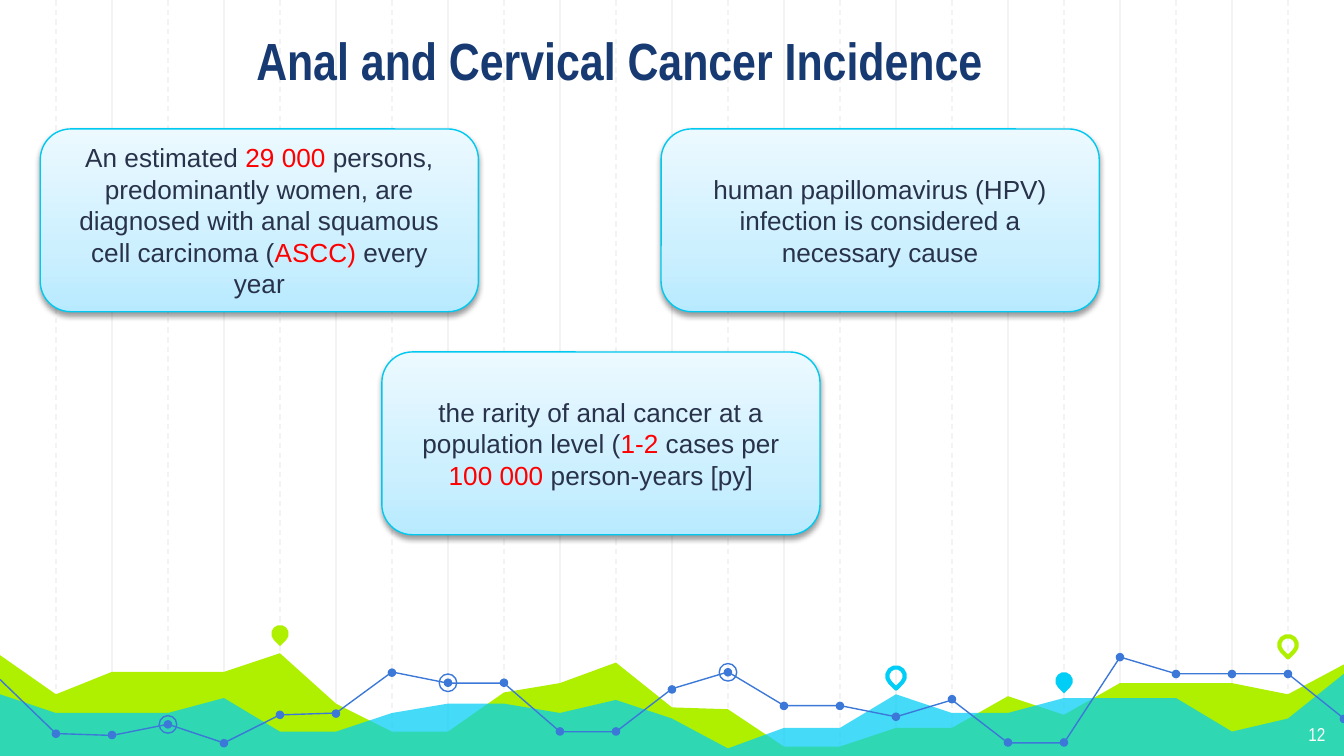
from lxml import etree
from pptx import Presentation
from pptx import util as u
from pptx.dml.color import RGBColor
from pptx.enum import dml, shapes, text
from pptx.oxml import parse_xml
from pptx.oxml.ns import nsdecls, qn

WIDTH, HEIGHT = 720, 405
STEP = 30  # horizontal distance between grid lines
BASE = 406.5  # foot of the waves and of the grid lines

NAVY, INK, RED, WHITE = "173A73", "28324A", "FF0000", "FFFFFF"
GRID, GREEN, CYAN, BLUE = "F3F3F3", "AFF000", "00CEF6", "3C78D8"
CARD_LINE = "00C9F1"
CARD_STOPS = [(0, "B8EAFF"), (35, "CDF0FF"), (100, "ECF9FF")]

TITLE = "Anal and Cervical Cancer Incidence"
PAGE_NUMBER = "12"

CARD_SIZE = (234.7, 97.9)
CARDS = [  # left, top, runs
    (21.6, 69.1, [
        ("An estimated ", INK), ("29 000", RED),
        (" persons, predominantly women, are diagnosed with anal squamous cell carcinoma (", INK),
        ("ASCC)", RED), (" every year", INK)]),
    (354.2, 69.1, [
        ("human papillomavirus (HPV) infection is considered a necessary cause", INK)]),
    (204.6, 188.6, [
        ("the rarity of anal cancer at a population level (", INK), ("1‐2", RED),
        (" cases per ", INK), ("100 000 ", RED), ("person‐years [py]", INK)]),
]

# One height for each grid line, from the left edge to the right edge
GREEN_WAVE = [350.6, 372.2, 360, 360, 360, 349.9, 376.6, 391.7, 391.7, 370.8, 365.8, 355, 379.4,
              380.2, 399.6, 399.6, 389.5, 389.5, 373, 383, 366.5, 366.1, 365.8, 372.2, 355.7]
CYAN_WAVE = [371.5, 382.3, 382.3, 382.3, 373.7, 392.4, 392.4, 382.3, 376.6, 376.6, 381.6, 375.1,
             385.2, 401, 390.2, 390.2, 372.2, 382.3, 382.3, 373.7, 373.7, 373.7, 391.7, 385.2, 360.7]
TREND = [364.3, 393.1, 393.8, 388.1, 398.2, 383, 382.3, 360.4, 365.8, 365.8, 391.9, 391.9, 369.4,
         360.2, 378.2, 378.2, 384, 374.6, 397.8, 397.8, 352.1, 361.1, 361.1, 361.1, 385.2]
TREND_PIECES = [(0, 11), (11, 20), (20, 24)]
RINGED = [8, 3, 13]
PINS = [  # grid line, middle height, colour, filled
    (5, 339.5, GREEN, True), (16, 362.2, CYAN, False),
    (19, 364.8, CYAN, True), (23, 345.5, GREEN, False),
]


def color(value):
    return RGBColor.from_string(value)


def paint(shape, fill=None, line=None, weight=0.75):
    shape.shadow.inherit = False
    if fill:
        shape.fill.solid()
        shape.fill.fore_color.rgb = color(fill)
    else:
        shape.fill.background()
    if line:
        shape.line.color.rgb = color(line)
        shape.line.width = u.Pt(weight)
    else:
        shape.line.fill.background()


def write(shape, runs, size, font, align, anchor, bold=False, inset=None):
    """Fill the shape with one paragraph of (text, colour) runs."""
    frame = shape.text_frame
    frame.word_wrap = True
    frame.auto_size = text.MSO_AUTO_SIZE.NONE
    frame.vertical_anchor = anchor
    if inset is not None:
        frame.margin_left = frame.margin_right = u.Pt(inset)
        frame.margin_top = frame.margin_bottom = u.Pt(inset)
    paragraph = frame.paragraphs[0]
    paragraph.alignment = align
    for words, shade in runs:
        run = paragraph.add_run()
        run.text = words
        run.font.size, run.font.name, run.font.bold = u.Pt(size), font, bold
        run.font.color.rgb = color(shade)


def place(shape, left, top, width, height):
    shape.left, shape.top = u.Pt(left), u.Pt(top)
    shape.width, shape.height = u.Pt(width), u.Pt(height)


def add_centred(kind, x, y, size):
    half = size / 2
    return slide.shapes.add_shape(kind, u.Pt(x - half), u.Pt(y - half), u.Pt(size), u.Pt(size))


def add_outline(points, close):
    builder = slide.shapes.build_freeform(*points[0], scale=u.Pt(1))
    builder.add_line_segments(points[1:], close=close)
    return builder.convert_to_shape()


def on_grid(heights, first=0):
    return [(STEP * i, y) for i, y in enumerate(heights, first)]


def add_wave(heights, fill):
    wave = add_outline(on_grid(heights) + [(WIDTH, BASE), (0, BASE)], True)
    paint(wave, fill)
    return wave


def add_grid_line(x, dashed):
    line = slide.shapes.add_connector(
        shapes.MSO_CONNECTOR.STRAIGHT, u.Pt(x), u.Pt(0), u.Pt(x), u.Pt(BASE))
    line.line.color.rgb = color(GRID)
    line.line.width = u.Pt(0.75)
    if dashed:
        line.line.dash_style = dml.MSO_LINE.DASH
    etree.SubElement(line._element.spPr, qn("a:effectLst"))


def add_card(left, top, runs):
    card = slide.shapes.add_shape(
        shapes.MSO_SHAPE.ROUNDED_RECTANGLE, u.Pt(left), u.Pt(top), *map(u.Pt, CARD_SIZE))
    paint(card, WHITE, CARD_LINE)
    properties = card._element.spPr
    stops = "".join(f'<a:gs pos="{at * 1000}"><a:srgbClr val="{shade}"/></a:gs>'
                    for at, shade in CARD_STOPS)
    properties.replace(properties.find(qn("a:solidFill")), parse_xml(
        f'<a:gradFill {nsdecls("a")}><a:gsLst>{stops}</a:gsLst>'
        '<a:lin ang="16200000" scaled="0"/></a:gradFill>'))
    properties.find(qn("a:effectLst")).append(parse_xml(
        f'<a:outerShdw {nsdecls("a")} blurRad="{u.Pt(3.1)}" dist="{u.Pt(1.6)}" dir="5400000" '
        'rotWithShape="0"><a:srgbClr val="000000"><a:alpha val="38000"/></a:srgbClr></a:outerShdw>'))
    write(card, runs, 14, "Arial", text.PP_ALIGN.CENTER, text.MSO_ANCHOR.MIDDLE)


presentation = Presentation()
presentation.slide_width, presentation.slide_height = u.Pt(WIDTH), u.Pt(HEIGHT)
slide = presentation.slides.add_slide(presentation.slide_layouts[5])

for first in (2, 1):  # solid lines on even steps, dashed on odd ones
    for i in range(first, WIDTH // STEP, 2):
        add_grid_line(STEP * i, dashed=first == 1)

add_wave(GREEN_WAVE, GREEN)
cyan_wave = add_wave(CYAN_WAVE, CYAN)
cyan_fill = cyan_wave._element.spPr.find(qn("a:solidFill"))
etree.SubElement(cyan_fill[0], qn("a:alpha"), val="73000")

for start, end in TREND_PIECES:
    paint(add_outline(on_grid(TREND[start:end + 1], start), False), line=BLUE)
for x, y in on_grid(TREND)[1:]:
    paint(add_centred(shapes.MSO_SHAPE.OVAL, x, y, 4.6), BLUE)
for i in RINGED:
    paint(add_centred(shapes.MSO_SHAPE.OVAL, STEP * i, TREND[i], 9.4), line=BLUE)

for i, y, shade, filled in PINS:
    pin = add_centred(shapes.MSO_SHAPE.TEAR, STEP * i, y, 9.4)
    pin.rotation = 135
    paint(pin, shade if filled else None, None if filled else shade, 2.25)

title = slide.shapes.title
slide.shapes._spTree.append(title._element)  # in front of the grid lines
place(title, 56.2, 0, 550.8, 56.2)
write(title, [(TITLE, NAVY)], 28, "Arial Narrow", text.PP_ALIGN.CENTER,
      text.MSO_ANCHOR.BOTTOM, bold=True, inset=7.2)

page_number = slide.shapes.add_textbox(u.Pt(673.9), u.Pt(380.2), u.Pt(43.2), u.Pt(25.2))
write(page_number, [(PAGE_NUMBER, WHITE)], 10, "Arial Narrow", text.PP_ALIGN.RIGHT,
      text.MSO_ANCHOR.TOP, inset=7.2)

for card in CARDS:
    add_card(*card)

presentation.save("out.pptx")
